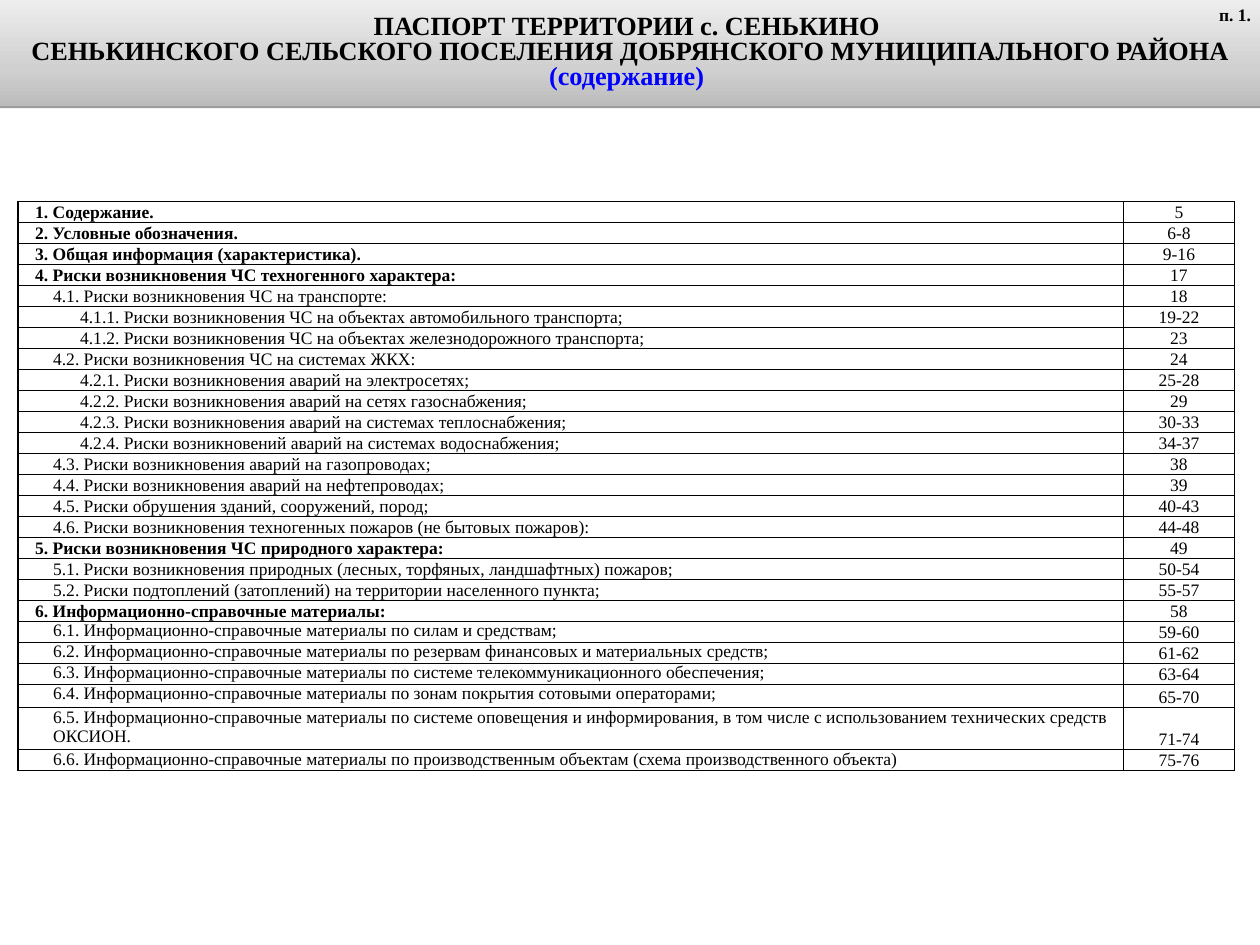
from lxml import etree
from pptx import Presentation
from pptx.dml.color import RGBColor
from pptx.enum.shapes import MSO_SHAPE
from pptx.enum.text import MSO_ANCHOR, PP_ALIGN
from pptx.oxml import parse_xml
from pptx.oxml.ns import nsdecls, qn
from pptx.util import Inches, Pt

RECTANGLE = MSO_SHAPE.RECTANGLE
TOP, MIDDLE, BOTTOM = MSO_ANCHOR.TOP, MSO_ANCHOR.MIDDLE, MSO_ANCHOR.BOTTOM
LEFT, CENTER, RIGHT = PP_ALIGN.LEFT, PP_ALIGN.CENTER, PP_ALIGN.RIGHT

FONT = "Times New Roman"
BLACK, BLUE, WHITE = "000000", "0000FF", "FFFFFF"
HEADER_STOPS = [(0, "BCBCBC"), (35, "D0D0D0"), (100, "EDEDED")]

TITLE = [
    ("ПАСПОРТ ТЕРРИТОРИИ с. СЕНЬКИНО ", BLACK),
    ("СЕНЬКИНСКОГО СЕЛЬСКОГО ПОСЕЛЕНИЯ ДОБРЯНСКОГО МУНИЦИПАЛЬНОГО РАЙОНА", BLACK),
    ("(содержание) ", BLUE),
]
PAGE_MARK = "п. 1."
CONTENTS = [
    ("1. Содержание.", "5"),
    ("2. Условные обозначения.", "6-8"),
    ("3. Общая информация (характеристика).", "9-16"),
    ("4. Риски возникновения ЧС техногенного характера:", "17"),
    ("4.1. Риски возникновения ЧС на транспорте:", "18"),
    ("4.1.1. Риски возникновения ЧС на объектах автомобильного транспорта;", "19-22"),
    ("4.1.2. Риски возникновения ЧС на объектах железнодорожного транспорта;", "23"),
    ("4.2. Риски возникновения ЧС на системах ЖКХ:", "24"),
    ("4.2.1. Риски возникновения аварий на электросетях;", "25-28"),
    ("4.2.2. Риски возникновения аварий на сетях газоснабжения;", "29"),
    ("4.2.3. Риски возникновения аварий на системах теплоснабжения;", "30-33"),
    ("4.2.4. Риски возникновений аварий на системах водоснабжения;", "34-37"),
    ("4.3. Риски возникновения аварий на газопроводах;", "38"),
    ("4.4. Риски возникновения аварий на нефтепроводах;", "39"),
    ("4.5. Риски обрушения зданий, сооружений, пород;", "40-43"),
    ("4.6. Риски возникновения техногенных пожаров (не бытовых пожаров):", "44-48"),
    ("5. Риски возникновения ЧС природного характера:", "49"),
    ("5.1. Риски возникновения природных (лесных, торфяных, ландшафтных) пожаров;", "50-54"),
    ("5.2. Риски подтоплений (затоплений) на территории населенного пункта;", "55-57"),
    ("6. Информационно-справочные материалы:", "58"),
    ("6.1. Информационно-справочные материалы по силам и средствам;", "59-60"),
    ("6.2. Информационно-справочные материалы по резервам финансовых и материальных средств;", "61-62"),
    ("6.3. Информационно-справочные материалы по системе телекоммуникационного обеспечения;", "63-64"),
    ("6.4. Информационно-справочные материалы по зонам покрытия сотовыми операторами;", "65-70"),
    ("6.5. Информационно-справочные материалы по системе оповещения и информирования, "
     "в том числе с использованием технических средств ОКСИОН.", "71-74"),
    ("6.6. Информационно-справочные материалы по производственным объектам "
     "(схема производственного объекта)", "75-76"),
]
INDENTS = {1: 0.19, 2: 0.39, 3: 0.69}
COLUMN_WIDTHS = [12.28, 1.24]
TABLE_HEIGHT = 6.33
TALL_ROWS = {23: 0.26, 24: 0.47}


def color(value):
    return RGBColor.from_string(value)


def write(paragraph, text, size, align, bold=False, text_color=BLACK):
    paragraph.text = text
    paragraph.alignment = align
    for run in paragraph.runs:
        run.font.name = FONT
        run.font.size = Pt(size)
        run.font.bold = bold
        run.font.color.rgb = color(text_color)


def fill_header(shape):
    stops = "".join(
        f'<a:gs pos="{position * 1000}"><a:srgbClr val="{value}"/></a:gs>'
        for position, value in HEADER_STOPS
    )
    shape.fill.gradient()
    shape.fill.gradient_angle = 90
    gradient = shape._element.spPr.find(qn("a:gradFill"))
    gradient.replace(
        gradient.find(qn("a:gsLst")),
        parse_xml(f'<a:gsLst {nsdecls("a")}>{stops}</a:gsLst>'),
    )
    shape.line.fill.background()
    shape.shadow.inherit = False
    effects = shape._element.spPr.find(qn("a:effectLst"))
    effects.append(parse_xml(
        f'<a:outerShdw {nsdecls("a")} blurRad="0" dist="{Pt(1.6)}" dir="5400000" rotWithShape="0">'
        f'<a:srgbClr val="{BLACK}"><a:alpha val="38000"/></a:srgbClr></a:outerShdw>'
    ))


def add_borders(cell):
    properties = cell._tc.get_or_add_tcPr()
    for side in ("lnL", "lnR", "lnT", "lnB"):
        line = etree.SubElement(properties, qn(f"a:{side}"), w=str(Pt(1)))
        solid = etree.SubElement(line, qn("a:solidFill"))
        etree.SubElement(solid, qn("a:srgbClr"), val=BLACK)


def fill_cell(cell, text, align, anchor, bold=False, indent=0):
    add_borders(cell)
    cell.fill.solid()
    cell.fill.fore_color.rgb = color(WHITE)
    cell.margin_left = cell.margin_right = cell.margin_top = cell.margin_bottom = 0
    cell.vertical_anchor = anchor
    paragraph = cell.text_frame.paragraphs[0]
    write(paragraph, text, 14, align, bold)
    paragraph._p.get_or_add_pPr().set("marL", str(Inches(indent)))


def add_contents(slide):
    table = slide.shapes.add_table(
        len(CONTENTS), 2, Inches(0.2), Inches(2.24),
        Inches(sum(COLUMN_WIDTHS)), Inches(TABLE_HEIGHT),
    ).table
    table.first_row = table.horz_banding = False
    for column, width in zip(table.columns, COLUMN_WIDTHS):
        column.width = Inches(width)
    row_height = (TABLE_HEIGHT - sum(TALL_ROWS.values())) / (len(CONTENTS) - len(TALL_ROWS))
    for index, (heading, pages) in enumerate(CONTENTS):
        table.rows[index].height = Inches(TALL_ROWS.get(index, row_height))
        number = heading.split()[0]
        level = number.count(".")
        anchor = TOP if number.startswith("6.") and level == 2 else BOTTOM
        fill_cell(table.cell(index, 0), heading, LEFT, anchor, level == 1, INDENTS[level])
        fill_cell(table.cell(index, 1), pages, CENTER, BOTTOM)


def add_header(slide):
    header = slide.shapes.add_shape(RECTANGLE, 0, 0, Inches(14), Inches(1.18))
    fill_header(header)
    frame = header.text_frame
    frame.word_wrap = True
    frame.vertical_anchor = MIDDLE
    frame.text = "\n".join(text for text, _ in TITLE)
    for paragraph, (text, text_color) in zip(frame.paragraphs, TITLE):
        write(paragraph, text, 21, CENTER, True, text_color)
        paragraph.line_spacing = 0.8


def add_page_mark(slide):
    box = slide.shapes.add_textbox(Inches(13.21), 0, Inches(0.79), Inches(0.33))
    box.text_frame.word_wrap = True
    write(box.text_frame.paragraphs[0], PAGE_MARK, 14, RIGHT, True)


def main():
    presentation = Presentation()
    presentation.slide_width = Inches(14)
    presentation.slide_height = Inches(10.5)
    slide = presentation.slides.add_slide(presentation.slide_layouts[6])
    add_contents(slide)
    add_header(slide)
    add_page_mark(slide)
    presentation.save("out.pptx")


if __name__ == "__main__":
    main()
